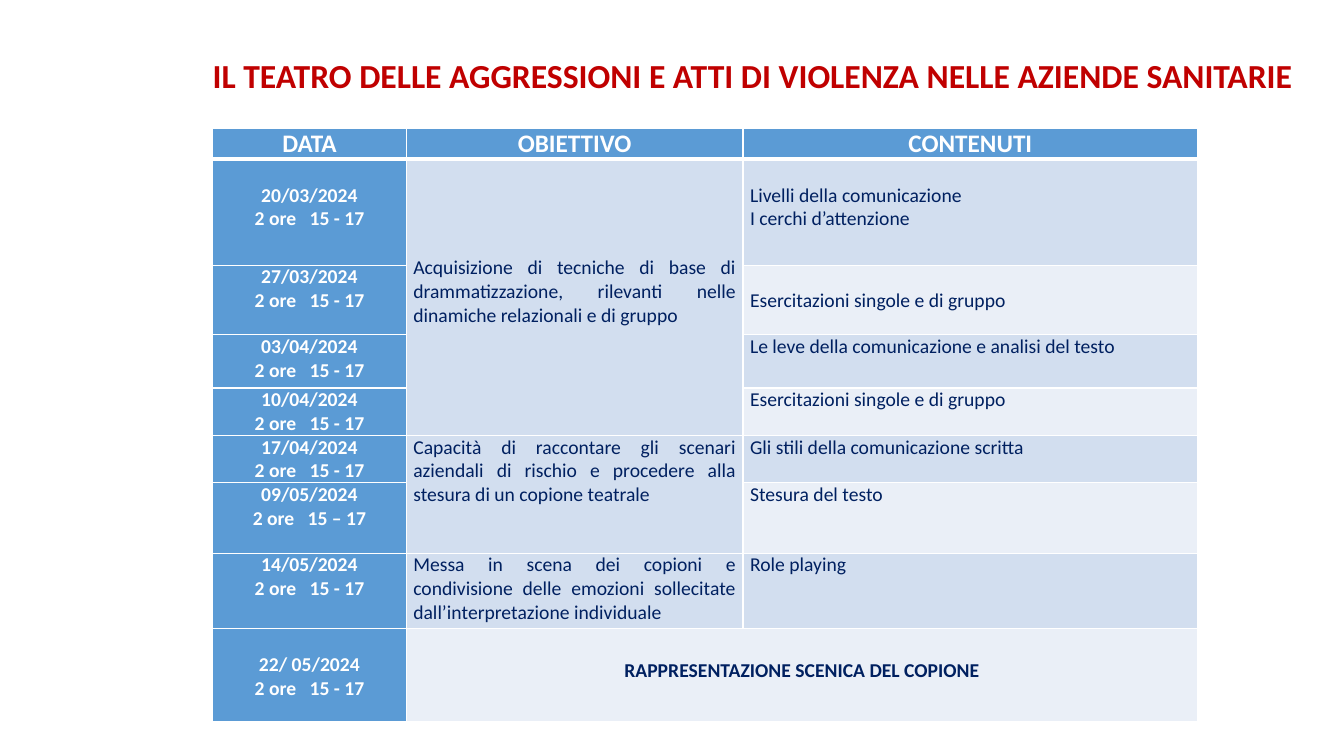
import pptx
import pptx.util
import pptx.dml.color
import pptx.enum.text
import pptx.oxml
import pptx.oxml.ns

Inches, Pt = pptx.util.Inches, pptx.util.Pt
ALIGN = pptx.enum.text.PP_ALIGN
ANCHOR = pptx.enum.text.MSO_ANCHOR

COLORS = {"title": "C00000", "head": "5B9BD5", "dark": "D2DEEF",
          "light": "EAEFF7", "text": "002060", "white": "FFFFFF"}
FONT = "Calibri"
LINE = 0.24
COLS = [1.92, 3.34, 4.51]
HEADINGS = ["DATA", "OBIETTIVO", "CONTENUTI"]
HEAD_HEIGHT = 0.31

SESSIONS = [
    (1.05, "20/03/2024", "15 - 17", LINE, ["Livelli della comunicazione", "I cerchi d’attenzione"], LINE),
    (0.69, "27/03/2024", "15 - 17", 0, ["Esercitazioni singole e di gruppo"], LINE),
    (0.53, "03/04/2024", "15 - 17", 0, ["Le leve della comunicazione e analisi del testo"], 0),
    (0.47, "10/04/2024", "15 - 17", 0, ["Esercitazioni singole e di gruppo"], 0),
    (0.47, "17/04/2024", "15 - 17", 0, ["Gli stili della comunicazione scritta"], 0),
    (0.7, "09/05/2024", "15 – 17", 0, ["Stesura del testo"], 0),
    (0.75, "14/05/2024", "15 - 17", 0, ["Role playing"], 0),
    (0.92, "22/ 05/2024", "15 - 17", LINE, [], 0),
]
OBJECTIVES = [
    (1, 4, 4 * LINE, "Acquisizione di tecniche di base di drammatizzazione, rilevanti nelle "
                     "dinamiche relazionali e di gruppo"),
    (5, 6, 0, "Capacità di raccontare gli scenari aziendali di rischio e procedere alla "
              "stesura di un copione teatrale"),
    (7, 7, 0, "Messa in scena dei copioni e condivisione delle emozioni sollecitate "
              "dall’interpretazione individuale"),
]
FINALE = "RAPPRESENTAZIONE SCENICA DEL COPIONE"


def rgb(name):
    """Return the named colour."""
    return pptx.dml.color.RGBColor.from_string(COLORS[name])


def add_run(p, text, size, color, bold):
    """Add one formatted run to a paragraph."""
    r = p.add_run()
    r.text = text
    r.font.name, r.font.size, r.font.bold = FONT, Pt(size), bold
    r.font.color.rgb = rgb(color)
    return r


def style_cell(cell, fill, top, bottom):
    """Set the borders and fill of a cell."""
    tcPr = cell._tc.get_or_add_tcPr()
    for side, width in (("L", 1), ("R", 1), ("T", top), ("B", bottom)):
        tcPr.append(pptx.oxml.parse_xml(
            f'<a:ln{side} {pptx.oxml.ns.nsdecls("a")} w="{Pt(width)}"><a:solidFill>'
            f'<a:srgbClr val="{COLORS["white"]}"/></a:solidFill></a:ln{side}>'))
    cell.fill.solid()
    cell.fill.fore_color.rgb = rgb(fill)


def fill_cell(cell, lines, align, top=0, size=14, color="text", bold=False):
    """Write paragraphs, each a list of texts, into a cell below a top inset."""
    cell.margin_left = cell.margin_right = Inches(0.07)
    cell.margin_top, cell.margin_bottom = Inches(top), 0
    cell.vertical_anchor = ANCHOR.TOP
    tf = cell.text_frame
    for i, texts in enumerate(lines):
        p = tf.paragraphs[0] if i == 0 else tf.add_paragraph()
        p.alignment = align
        for text in texts:
            r = add_run(p, text, size, color, bold)
            if text == " ":
                r._r.get_or_add_rPr().set("spc", "630")


def add_title(s, x, y, w, h):
    """Place the slide title in its box."""
    sp = s.shapes.title
    sp.left, sp.top, sp.width, sp.height = map(Inches, (x, y, w, h))
    tf = sp.text_frame
    tf.word_wrap = True
    tf.auto_size = pptx.enum.text.MSO_AUTO_SIZE.SHAPE_TO_FIT_TEXT
    tf.vertical_anchor = ANCHOR.MIDDLE
    p = tf.paragraphs[0]
    p.alignment, p.line_spacing = ALIGN.CENTER, 0.9
    add_run(p, "IL TEATRO DELLE AGGRESSIONI E ATTI DI VIOLENZA NELLE AZIENDE SANITARIE",
            24, "title", True)


def add_programme(s, x, y):
    """Build the table of sessions from its top left corner."""
    heights = [HEAD_HEIGHT] + [session[0] for session in SESSIONS]
    last = len(SESSIONS)
    table = s.shapes.add_table(len(heights), len(COLS), Inches(x), Inches(y),
                               Inches(sum(COLS)), Inches(sum(heights))).table
    table.horz_banding = False
    for column, width in zip(table.columns, COLS):
        column.width = Inches(width)
    for i, height in enumerate(heights):
        table.rows[i].height = Inches(height)
        for j in range(len(COLS)):
            band = "dark" if i % 2 else "light"
            objective = j == 1 and i < last
            fill = "head" if i == 0 or j == 0 else "dark" if objective else band
            style_cell(table.cell(i, j), fill, 3 if i == 1 else 1, 3 if i == 0 else 1)

    for j, heading in enumerate(HEADINGS):
        fill_cell(table.cell(0, j), [[heading]], ALIGN.CENTER, size=18, color="white", bold=True)
    for i, (_, date, hours, date_top, topics, topic_top) in enumerate(SESSIONS, 1):
        fill_cell(table.cell(i, 0), [[date], ["2 ore", " ", hours]], ALIGN.CENTER,
                  date_top, color="white", bold=True)
        if topics:
            fill_cell(table.cell(i, 2), [[topic] for topic in topics], ALIGN.JUSTIFY, topic_top)
    for first, final, top, text in OBJECTIVES:
        if final > first:
            table.cell(first, 1).merge(table.cell(final, 1))
        fill_cell(table.cell(first, 1), [[text]], ALIGN.JUSTIFY, top)
    table.cell(last, 1).merge(table.cell(last, 2))
    fill_cell(table.cell(last, 1), [[FINALE]], ALIGN.CENTER, 0.3, bold=True)


def main():
    """Build and save the slide."""
    prs = pptx.Presentation()
    prs.slide_width, prs.slide_height = Inches(13.33), Inches(7.5)
    s = prs.slides.add_slide(prs.slide_layouts[5])
    add_title(s, 1.55, 0.54, 11.83, 0.46)
    add_programme(s, 2.11, 1.27)
    prs.save("out.pptx")


if __name__ == "__main__":
    main()
